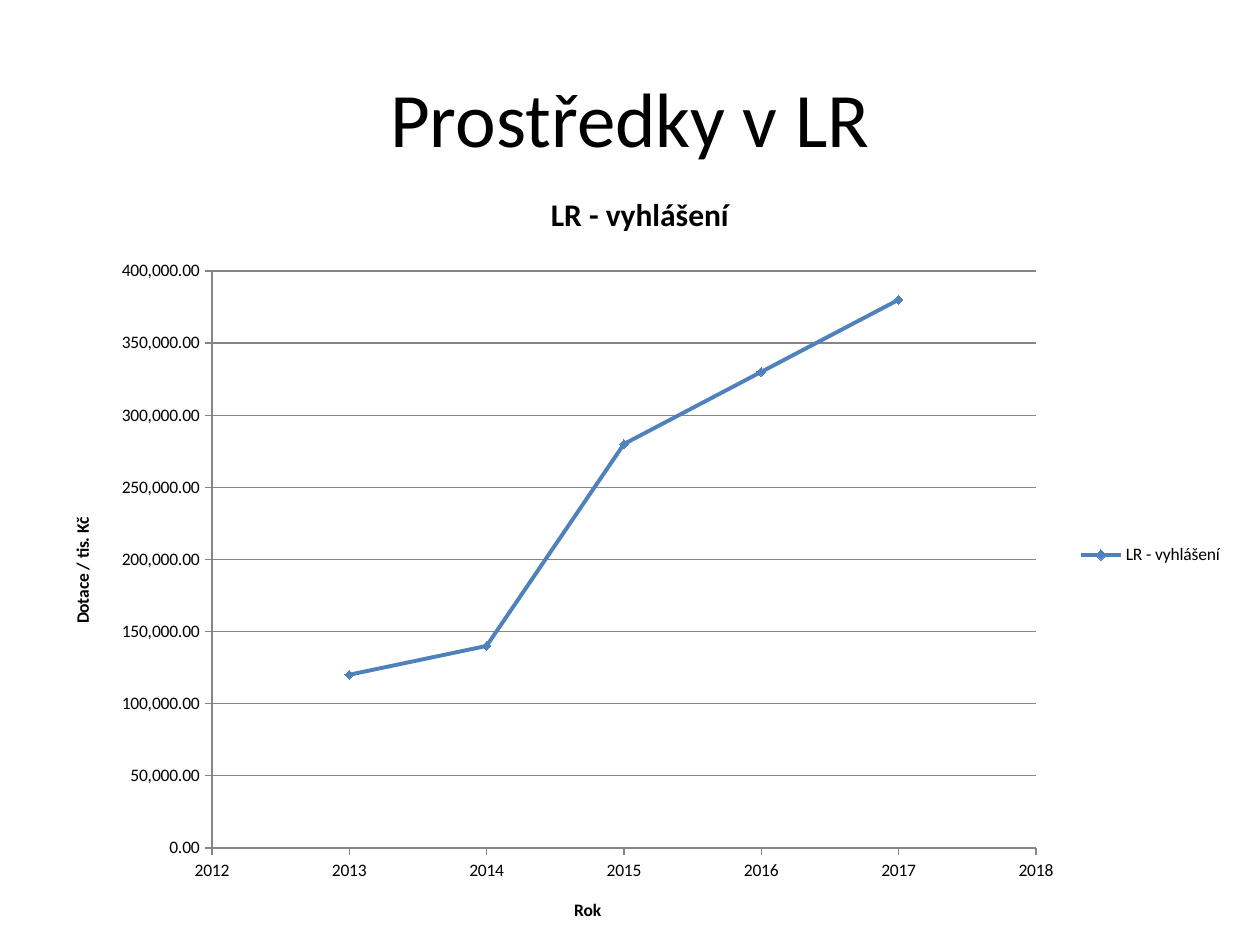
from lxml import etree
from pptx import Presentation, util as u
from pptx.chart.data import XyChartData
from pptx.dml.color import RGBColor
from pptx.enum import chart as ch, text
from pptx.oxml import ns

BLACK = RGBColor(0, 0, 0)
GRAY = RGBColor(0x86, 0x86, 0x86)
BLUE = RGBColor(0x4F, 0x81, 0xBD)
NAME = "LR - vyhlášení"
POINTS = {2013: 120000, 2014: 140000, 2015: 280000, 2016: 330000, 2017: 380000}


def px(n):
    return u.Emu(round(n * 914400 / 126))


def style(font, size, bold=False):
    font.name, font.size, font.bold = "Calibri", u.Pt(size), bold
    font.color.rgb = BLACK


def write(frame, words, size=10, bold=False, align=text.PP_ALIGN.CENTER):
    par = frame.paragraphs[0]
    par.alignment = align
    run = par.add_run()
    run.text = words
    style(run.font, size, bold)


def place(plot, **parts):
    """Fix the inner plot area, in fractions of the chart."""
    old = plot.find(ns.qn("c:layout"))
    if old is not None:
        plot.remove(old)
    layout = etree.Element(ns.qn("c:layout"))
    plot.insert(0, layout)
    manual = etree.SubElement(layout, ns.qn("c:manualLayout"))
    rules = {"layoutTarget": "inner", "xMode": "edge", "yMode": "edge", **parts}
    for tag, val in rules.items():
        etree.SubElement(manual, ns.qn(f"c:{tag}")).set("val", str(val))


class Deck:
    def __init__(self, wide, high):
        self.prs = Presentation()
        self.prs.slide_width, self.prs.slide_height = px(wide), px(high)
        self.slide = self.prs.slides.add_slide(self.prs.slide_layouts[5])

    def title(self, words, x, y, w, h):
        box = self.slide.shapes.title
        box.left, box.top, box.width, box.height = map(px, (x, y, w, h))
        box.text_frame.vertical_anchor = text.MSO_ANCHOR.MIDDLE
        write(box.text_frame, words, size=44)

    def axis(self, axis, name, low, high, step, form):
        axis.minimum_scale, axis.maximum_scale = low, high
        axis.major_unit = step
        axis.major_tick_mark = ch.XL_TICK_MARK.OUTSIDE
        axis.minor_tick_mark = ch.XL_TICK_MARK.NONE
        axis.tick_labels.number_format = form
        axis.tick_labels.number_format_is_linked = False
        axis.format.line.color.rgb = GRAY
        write(axis.axis_title.text_frame, name, bold=True)

    def scatter(self, name, points, x, y, w, h):
        data = XyChartData()
        row = data.add_series(name)
        for year, val in points.items():
            row.add_data_point(year, val)
        chart = self.slide.shapes.add_chart(
            ch.XL_CHART_TYPE.XY_SCATTER_LINES, *map(px, (x, y, w, h)), data
        ).chart
        style(chart.font, 10)
        write(chart.chart_title.text_frame, name, size=18, bold=True)
        chart.has_legend = True
        chart.legend.position = ch.XL_LEGEND_POSITION.RIGHT
        chart.legend.include_in_layout = False
        self.axis(chart.category_axis, "Rok", 2012, 2018, 1, "General")
        self.axis(chart.value_axis, "Dotace / tis. Kč", 0, 400000, 50000, "#,##0.00")
        chart.category_axis.has_major_gridlines = False
        chart.value_axis.has_major_gridlines = True
        chart.value_axis.major_gridlines.format.line.color.rgb = GRAY
        plot = chart.plots[0]
        plot.vary_by_categories = False
        line = plot.series[0]
        line.smooth = False
        line.format.line.color.rgb = BLUE
        line.format.line.width = u.Pt(2.25)
        mark = line.marker
        mark.style, mark.size = ch.XL_MARKER_STYLE.DIAMOND, 5
        mark.format.fill.solid()
        mark.format.fill.fore_color.rgb = BLUE
        mark.format.line.color.rgb = BLUE
        area = chart.element.find(".//" + ns.qn("c:plotArea"))
        place(area, x=168 / w, y=106 / h, w=824 / w, h=577 / h)


def main():
    deck = Deck(1260, 945)
    deck.title("Prostředky v LR", 63, 38, 1134, 158)
    deck.scatter(NAME, POINTS, 44, 165, 1192, 780)
    deck.prs.save("out.pptx")


if __name__ == "__main__":
    main()
